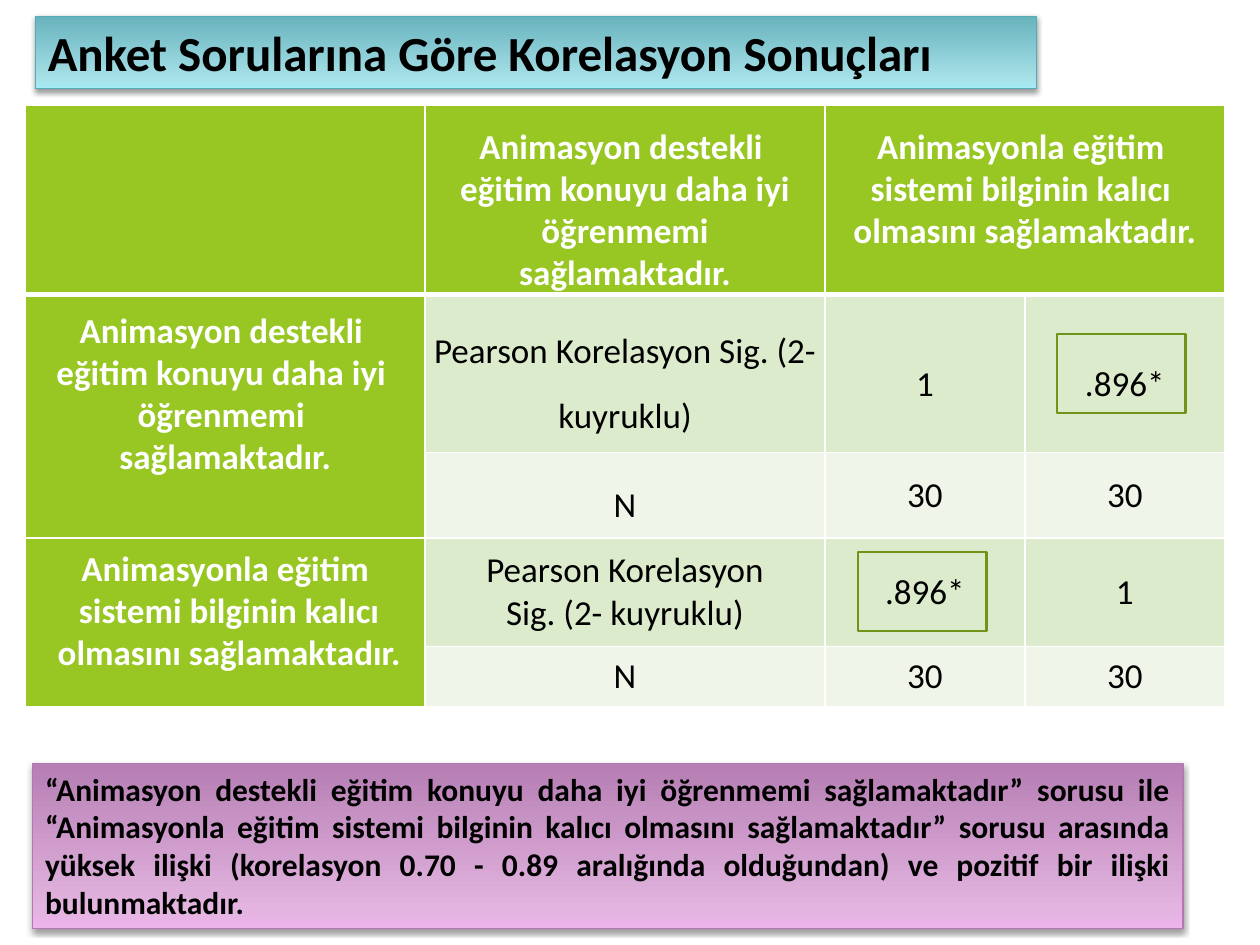
from dataclasses import dataclass

from lxml import etree
from pptx import Presentation
from pptx.dml.color import RGBColor
from pptx.enum.shapes import MSO_SHAPE
from pptx.enum.text import MSO_ANCHOR, MSO_AUTO_SIZE, PP_ALIGN
from pptx.oxml import parse_xml
from pptx.util import Cm, Pt

RECTANGLE = MSO_SHAPE.RECTANGLE
TOP, MIDDLE = MSO_ANCHOR.TOP, MSO_ANCHOR.MIDDLE
LEFT, CENTER, JUSTIFY = PP_ALIGN.LEFT, PP_ALIGN.CENTER, PP_ALIGN.JUSTIFY
NO_AUTOFIT = MSO_AUTO_SIZE.NONE

FONT = "Calibri"
NAMESPACE = "http://schemas.openxmlformats.org/drawingml/2006/main"
COLORS = {
    "text": "000000",
    "white": "FFFFFF",
    "header": "98C723",
    "band_dark": "DDEBCD",
    "band_light": "EFF5E8",
    "marker": "70931A",
    "title_line": "55AEB7",
    "note_line": "B477B1",
}
TITLE_GRADIENT = ((0, "A4ECF6"), (12, "A7E1E9"), (100, "68B3BD"))
NOTE_GRADIENT = ((0, "EDB4EA"), (12, "E3B4E0"), (100, "B67EB3"))

COLUMN_WIDTHS = (8.06, 8.06, 4.03, 4.03)
ROW_HEIGHTS = (3.1, 3.18, 1.73, 2.18, 1.22)
MARKERS = ((21.31, 6.73), (17.3, 11.13))


@dataclass
class Label:
    row: int
    column: int
    text: str
    last_row: int
    last_column: int
    anchor: int = MIDDLE
    top_margin: float = 0
    bottom_margin: float = 0


@dataclass
class Value:
    row: int
    column: int
    text: str
    spacing: float = 1.0


LABELS = (
    Label(0, 1, "Animasyon destekli \neğitim konuyu daha iyi\n öğrenmemi \nsağlamaktadır.",
          0, 1, TOP, 24),
    Label(0, 2, "Animasyonla eğitim \nsistemi bilginin kalıcı \nolmasını sağlamaktadır.",
          0, 3, TOP, 24),
    Label(1, 0, "Animasyon destekli \neğitim konuyu daha iyi \nöğrenmemi \nsağlamaktadır.",
          2, 0, bottom_margin=12),
    Label(3, 0, "Animasyonla eğitim\n sistemi bilginin kalıcı\n olmasını sağlamaktadır.",
          4, 0),
)
VALUES = (
    Value(1, 1, "Pearson Korelasyon Sig. (2- kuyruklu)", 1.5),
    Value(1, 2, "1", 1.5),
    Value(1, 3, ".896*", 1.5),
    Value(2, 1, "N", 1.5),
    Value(2, 2, "30"),
    Value(2, 3, "30"),
    Value(3, 1, "Pearson Korelasyon\nSig. (2- kuyruklu)"),
    Value(3, 2, ".896*"),
    Value(3, 3, "1"),
    Value(4, 1, "N"),
    Value(4, 2, "30"),
    Value(4, 3, "30"),
)


def color(name: str) -> RGBColor:
    return RGBColor.from_string(COLORS[name])


def format_text(frame, size: float, color_name: str, bold: bool, align,
                spacing=1.0, gap: float = 0) -> None:
    for index, para in enumerate(frame.paragraphs):
        para.alignment = align
        para.line_spacing = spacing
        para.space_before = Pt(gap if index else 0)
        for span in para.runs:
            span.font.name = FONT
            span.font.size = Pt(size)
            span.font.bold = bold
            span.font.color.rgb = color(color_name)


def style_panel(shape, stops, line_name: str) -> None:
    gradient_stops = "".join(
        f'<a:gs pos="{place * 1000}"><a:srgbClr val="{value}"/></a:gs>'
        for place, value in stops)
    properties = shape.element.spPr
    properties.append(parse_xml(
        f'<a:gradFill xmlns:a="{NAMESPACE}" rotWithShape="1">'
        f'<a:gsLst>{gradient_stops}</a:gsLst><a:lin ang="16200000" scaled="0"/></a:gradFill>'))
    shape.line.color.rgb = color(line_name)
    shape.line.width = Pt(0.75)
    properties.append(parse_xml(
        f'<a:effectLst xmlns:a="{NAMESPACE}"><a:outerShdw blurRad="40000" dist="20000" '
        'dir="5400000" rotWithShape="0"><a:srgbClr val="000000"><a:alpha val="38000"/>'
        '</a:srgbClr></a:outerShdw></a:effectLst>'))


def add_borders(cell, top: float, bottom: float) -> None:
    properties = cell._tc.get_or_add_tcPr()
    sides = (("lnL", 1), ("lnR", 1), ("lnT", top), ("lnB", bottom))
    for index, (side, width) in enumerate(sides):
        line = etree.fromstring(
            f'<a:{side} xmlns:a="{NAMESPACE}" w="{Pt(width)}"><a:solidFill>'
            f'<a:srgbClr val="{COLORS["white"]}"/></a:solidFill></a:{side}>')
        properties.insert(index, line)


def set_cell(cell, text: str, anchor, top_margin: float = 0, bottom_margin: float = 0) -> None:
    cell.text_frame.text = text
    cell.vertical_anchor = anchor
    cell.margin_left = cell.margin_right = Cm(0.15)
    cell.margin_top, cell.margin_bottom = Pt(top_margin), Pt(bottom_margin)


def add_correlation_table(page) -> None:
    table = page.shapes.add_table(
        len(ROW_HEIGHTS), len(COLUMN_WIDTHS), Cm(0.51), Cm(2.13),
        Cm(sum(COLUMN_WIDTHS)), Cm(sum(ROW_HEIGHTS))).table
    for column, width in zip(table.columns, COLUMN_WIDTHS):
        column.width = Cm(width)
    for row_index, height in enumerate(ROW_HEIGHTS):
        table.rows[row_index].height = Cm(height)
        band = "band_dark" if row_index % 2 else "band_light"
        for column_index in range(len(COLUMN_WIDTHS)):
            cell = table.cell(row_index, column_index)
            is_header = row_index == 0 or column_index == 0
            cell.fill.solid()
            cell.fill.fore_color.rgb = color("header" if is_header else band)
            add_borders(cell, 3 if row_index == 1 else 1, 3 if row_index == 0 else 1)
    for label in LABELS:
        cell = table.cell(label.row, label.column)
        last_cell = table.cell(label.last_row, label.last_column)
        if (label.row, label.column) != (label.last_row, label.last_column):
            cell.merge(last_cell)
        set_cell(cell, label.text, label.anchor, label.top_margin, label.bottom_margin)
        format_text(cell.text_frame, 20, "white", True, CENTER, Pt(12), 12)
    for value in VALUES:
        cell = table.cell(value.row, value.column)
        set_cell(cell, value.text, MIDDLE)
        format_text(cell.text_frame, 20, "text", False, CENTER, value.spacing)


def add_title(page) -> None:
    title = page.shapes.title
    title.left, title.top, title.width, title.height = Cm(0.71), Cm(0.33), Cm(20.19), Cm(1.45)
    style_panel(title, TITLE_GRADIENT, "title_line")
    frame = title.text_frame
    frame.text = "Anket Sorularına Göre Korelasyon Sonuçları"
    frame.auto_size = NO_AUTOFIT
    frame.vertical_anchor = MIDDLE
    format_text(frame, 28, "text", True, LEFT)


def add_marker(page, left: float, top: float) -> None:
    marker = page.shapes.add_shape(RECTANGLE, Cm(left), Cm(top), Cm(2.59), Cm(1.6))
    marker.shadow.inherit = False
    marker.fill.background()
    marker.line.color.rgb = color("marker")
    marker.line.width = Pt(1.25)


def add_note(page) -> None:
    note = page.shapes.add_shape(RECTANGLE, Cm(0.66), Cm(15.39), Cm(23.19), Cm(3.33))
    style_panel(note, NOTE_GRADIENT, "note_line")
    frame = note.text_frame
    frame.text = (
        "“Animasyon destekli eğitim konuyu daha iyi öğrenmemi sağlamaktadır” sorusu ile "
        "“Animasyonla eğitim sistemi bilginin kalıcı olmasını sağlamaktadır” sorusu arasında "
        "yüksek ilişki (korelasyon 0.70 - 0.89 aralığında olduğundan) ve pozitif bir ilişki "
        "bulunmaktadır.")
    frame.word_wrap = True
    frame.vertical_anchor = TOP
    format_text(frame, 18, "text", True, JUSTIFY)


def main() -> None:
    deck = Presentation()
    deck.slide_width, deck.slide_height = Cm(25.4), Cm(19.05)
    page = deck.slides.add_slide(deck.slide_layouts[5])
    add_correlation_table(page)
    add_title(page)
    for left, top in MARKERS:
        add_marker(page, left, top)
    add_note(page)
    deck.save("out.pptx")


if __name__ == "__main__":
    main()
